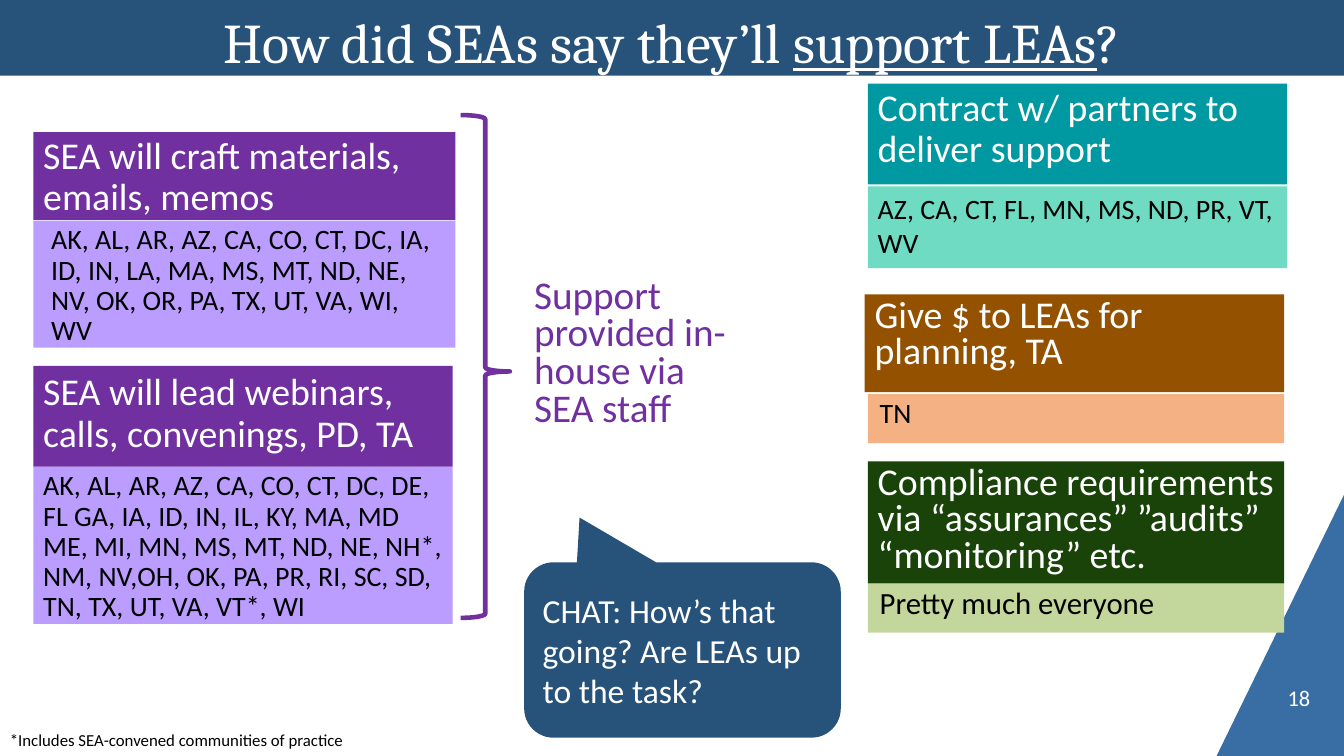
"""Build the slide on how SEAs say they'll support LEAs."""
import pptx
import pptx.dml.color
import pptx.enum.shapes
import pptx.enum.text
import pptx.util

Cm, Pt = pptx.util.Cm, pptx.util.Pt
RGBColor = pptx.dml.color.RGBColor
MSO_SHAPE = pptx.enum.shapes.MSO_SHAPE
PP_ALIGN = pptx.enum.text.PP_ALIGN
MSO_ANCHOR = pptx.enum.text.MSO_ANCHOR

WIDTH, HEIGHT = 33.87, 19.05
WHITE = RGBColor(0xFF, 0xFF, 0xFF)
BLACK = RGBColor(0, 0, 0)
NAVY = RGBColor(0x27, 0x52, 0x7A)
BLUE = RGBColor(0x38, 0x6E, 0xA3)
PURPLE = RGBColor(0x70, 0x30, 0xA0)
LILAC = RGBColor(0xBA, 0x9D, 0xFF)
TEAL = RGBColor(0x00, 0x99, 0xA1)
MINT = RGBColor(0x6E, 0xDB, 0xC2)
BROWN = RGBColor(0x94, 0x52, 0x00)
PEACH = RGBColor(0xF4, 0xB2, 0x84)
GREEN = RGBColor(0x19, 0x43, 0x09)
SAGE = RGBColor(0xC3, 0xD6, 0x9B)


def write(sp, runs, size, color, spacing=1.0, font="Calibri",
          align=PP_ALIGN.LEFT, anchor=MSO_ANCHOR.TOP, wrap=True):
    """Fill a shape with one paragraph and return its text frame."""
    tf = sp.text_frame
    tf.word_wrap = wrap
    tf.vertical_anchor = anchor
    p = tf.paragraphs[0]
    p.alignment, p.line_spacing = align, spacing
    p.font.size, p.font.name, p.font.color.rgb = Pt(size), font, color
    for text, underline in runs:
        r = p.add_run()
        r.text = text
        if underline:
            r.font.underline = True
    return tf


def add_block(s, kind, box, fill):
    """Add a filled preset shape without outline or shadow."""
    sp = s.shapes.add_shape(kind, *map(Cm, box))
    sp.shadow.inherit = False
    sp.fill.solid()
    sp.fill.fore_color.rgb = fill
    sp.line.fill.background()
    return sp


def add_label(s, box, text, size, color, **style):
    """Add a text box and return its text frame."""
    sp = s.shapes.add_textbox(*map(Cm, box))
    return write(sp, [(text, False)], size, color, **style)


def add_card(s, head_box, head, head_fill, head_spacing, body_box, body,
             body_fill, size=20, body_spacing=0.9, indent=0):
    """Add a coloured heading with its answer below."""
    sp = add_block(s, MSO_SHAPE.RECTANGLE, body_box, body_fill)
    tf = write(sp, [(body, False)], size, BLACK, body_spacing)
    tf.margin_left = Cm(0.25 + indent)
    sp = add_block(s, MSO_SHAPE.RECTANGLE, head_box, head_fill)
    write(sp, [(head, False)], 27, WHITE, head_spacing)


def add_corner(s):
    """Add the blue triangle in the lower right corner."""
    builder = s.shapes.build_freeform(Cm(WIDTH), Cm(12.47))
    builder.add_line_segments([(Cm(30.66), Cm(HEIGHT)), (Cm(WIDTH), Cm(HEIGHT))])
    sp = builder.convert_to_shape()
    sp.shadow.inherit = False
    sp.fill.solid()
    sp.fill.fore_color.rgb = BLUE
    sp.line.fill.background()


def add_brace(s, box):
    """Add the brace that joins the two in-house cards."""
    sp = s.shapes.add_shape(MSO_SHAPE.RIGHT_BRACE, *map(Cm, box))
    sp.shadow.inherit = False
    sp.adjustments[0], sp.adjustments[1] = 0.083, 0.51
    sp.fill.background()
    sp.line.color.rgb = PURPLE
    sp.line.width = Pt(3.25)


def add_callout(s, box, text):
    """Add the speech bubble with the chat question."""
    sp = add_block(s, MSO_SHAPE.ROUNDED_RECTANGULAR_CALLOUT, box, NAVY)
    for i, value in enumerate((-0.325, -0.755, 0.167)):
        sp.adjustments[i] = value
    write(sp, [(text, False)], 24, WHITE, anchor=MSO_ANCHOR.MIDDLE)


def add_title(s, runs):
    """Add the title band across the top."""
    sp = add_block(s, MSO_SHAPE.RECTANGLE, (0, 0, WIDTH, 1.91), NAVY)
    write(sp, runs, 40, WHITE, Pt(50), "Cambria", PP_ALIGN.CENTER)


def main():
    """Build and save the slide."""
    prs = pptx.Presentation()
    prs.slide_width, prs.slide_height = Cm(WIDTH), Cm(HEIGHT)
    s = prs.slides.add_slide(prs.slide_layouts[6])

    add_corner(s)
    tf = add_label(s, (31.75, 17.15, 1.27, 0.76), "18", 16, WHITE,
                   align=PP_ALIGN.RIGHT, anchor=MSO_ANCHOR.BOTTOM)
    tf.margin_left = tf.margin_right = tf.margin_top = tf.margin_bottom = 0

    add_card(s, (0.84, 3.33, 10.64, 2.21),
             "SEA will craft materials, emails, memos", PURPLE, 0.9,
             (0.84, 5.56, 10.64, 3.2),
             "AK, AL, AR, AZ, CA, CO, CT, DC, IA, ID, IN, LA, MA, MS, MT, ND, "
             "NE, NV, OK, OR, PA, TX, UT, VA, WI, WV", LILAC, indent=0.2)
    add_card(s, (0.84, 9.22, 10.57, 2.54),
             "SEA will lead webinars, calls, convenings, PD, TA", PURPLE, Pt(30),
             (0.84, 11.76, 10.57, 3.96),
             "AK, AL, AR, AZ, CA, CO, CT, DC, DE, FL GA, IA, ID, IN, IL, KY, "
             "MA, MD ME, MI, MN, MS, MT, ND, NE, NH*, NM, NV,OH, OK, PA, PR, "
             "RI, SC, SD, TN, TX, UT, VA, VT*, WI", LILAC)
    add_card(s, (21.87, 2.11, 10.57, 2.54),
             "Contract w/ partners to deliver support", TEAL, 0.9,
             (21.87, 4.7, 10.57, 2.06),
             "AZ, CA, CT, FL, MN, MS, ND, PR, VT, WV", MINT, body_spacing=1.0)
    add_card(s, (21.79, 7.42, 10.57, 2.46),
             "Give $ to LEAs for planning, TA", BROWN, Pt(26),
             (21.87, 9.93, 10.49, 1.24), "TN", PEACH, indent=0.05)
    add_card(s, (21.87, 11.63, 10.49, 3.07),
             "Compliance requirements via “assurances” ”audits” “monitoring” etc.",
             GREEN, Pt(26), (21.87, 14.7, 10.49, 1.24),
             "Pretty much everyone", SAGE, size=22, indent=0.05)

    add_brace(s, (11.61, 2.9, 1.24, 12.67))
    add_label(s, (13.21, 5.26, 5.84, 7.34),
              "Support provided in-house via SEA staff", 28, PURPLE,
              spacing=0.8, anchor=MSO_ANCHOR.MIDDLE)
    add_callout(s, (13.21, 14.17, 7.98, 4.42),
                "CHAT: How’s that going? Are LEAs up to the task?")
    add_title(s, [("How did SEAs say they’ll ", False),
                  ("support LEAs", True), ("?", False)])
    add_label(s, (0, 18.26, 9.02, 0.76),
              "*Includes SEA-convened communities of practice", 12, BLACK,
              wrap=False)
    prs.save("out.pptx")


if __name__ == "__main__":
    main()
